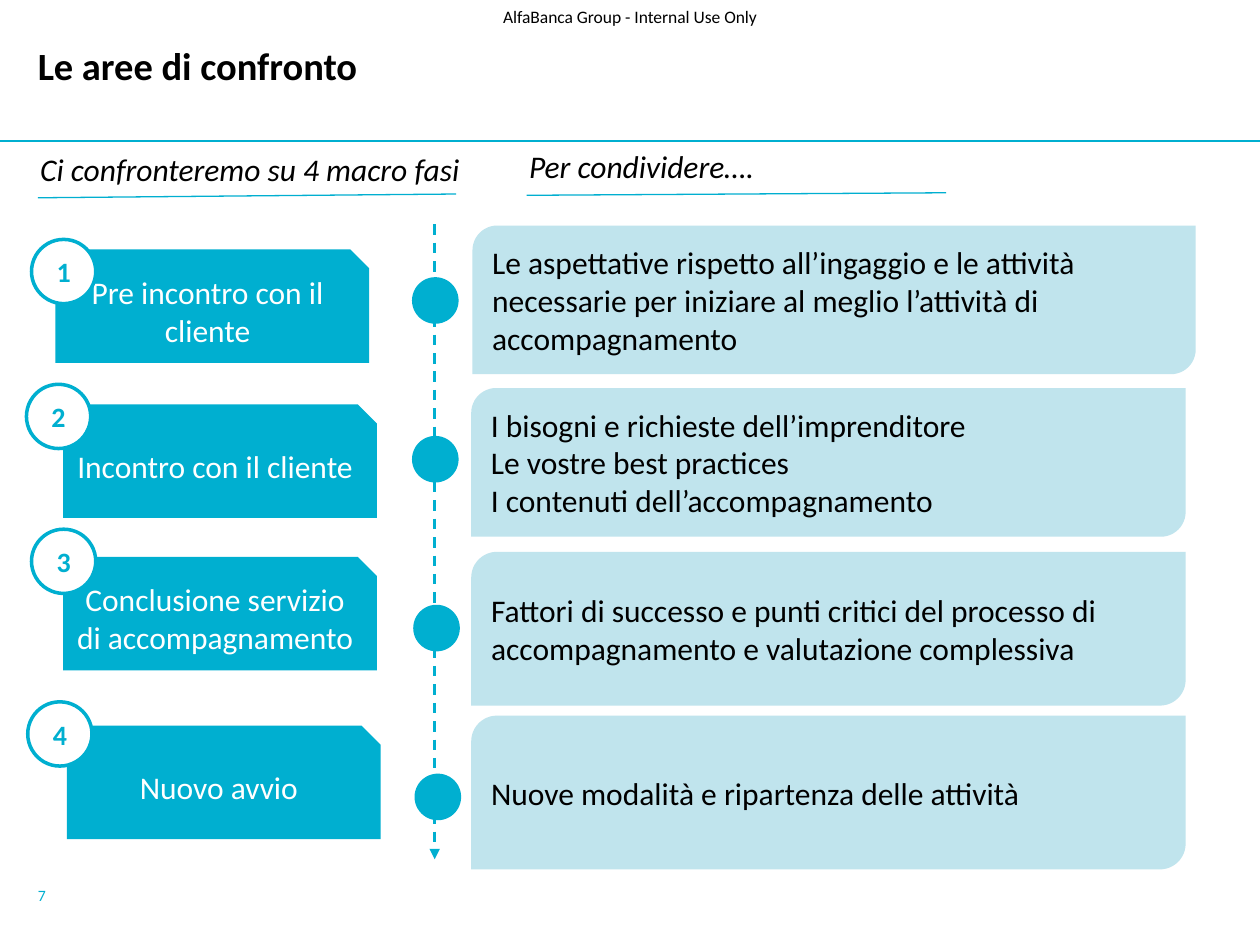
from dataclasses import dataclass

from lxml.etree import SubElement
from pptx import Presentation
from pptx.dml.color import RGBColor
from pptx.enum.dml import MSO_LINE
from pptx.enum.shapes import MSO_CONNECTOR, MSO_SHAPE
from pptx.enum.text import MSO_ANCHOR, PP_ALIGN
from pptx.oxml.ns import qn
from pptx.util import Inches, Pt


@dataclass(frozen=True)
class Theme:
    """Colours, font and type sizes of the slide."""
    font: str = "Calibri"
    accent: RGBColor = RGBColor(0x00, 0xAF, 0xD0)
    pale: RGBColor = RGBColor(0xC0, 0xE4, 0xED)
    white: RGBColor = RGBColor(0xFF, 0xFF, 0xFF)
    black: RGBColor = RGBColor(0x00, 0x00, 0x00)
    title: int = 22
    body: int = 18
    badge: int = 16
    label: int = 10
    page: int = 9


@dataclass(frozen=True)
class Phase:
    """One phase: its texts and the boxes of its parts."""
    step: str
    topics: tuple
    step_at: tuple
    badge_at: tuple
    dot_at: tuple
    topics_box: tuple


THEME = Theme()
STEP_SIZE = (2.49, 0.9)
BADGE_SIZE = (0.51, 0.51)
DOT_SIZE = (0.37, 0.37)
PHASES = [
    Phase("Pre incontro con il cliente",
          ("Le aspettative rispetto all’ingaggio e le attività necessarie per "
           "iniziare al meglio l’attività di accompagnamento",),
          (0.44, 1.98), (0.25, 1.9), (3.27, 2.2), (3.75, 1.79, 5.74, 1.18)),
    Phase("Incontro con il cliente",
          ("I bisogni e richieste dell’imprenditore", "Le vostre best practices",
           "I contenuti dell’accompagnamento"),
          (0.5, 3.21), (0.21, 3.05), (3.27, 3.46), (3.74, 3.08, 5.67, 1.18)),
    Phase("Conclusione servizio di accompagnamento",
          ("Fattori di successo e punti critici del processo di "
           "accompagnamento e valutazione complessiva",),
          (0.5, 4.42), (0.25, 4.2), (3.28, 4.8), (3.74, 4.38, 5.67, 1.22)),
    Phase("Nuovo avvio", ("Nuove modalità e ripartenza delle attività",),
          (0.53, 5.76), (0.22, 5.57), (3.29, 6.14), (3.74, 5.68, 5.67, 1.22)),
]


def write(tf, lines, size, color, align=PP_ALIGN.LEFT, bold=False, italic=False):
    """Fill a text frame with one paragraph per line."""
    tf.word_wrap = True
    tf.vertical_anchor = MSO_ANCHOR.MIDDLE
    for i, line in enumerate(lines):
        p = tf.add_paragraph() if i else tf.paragraphs[0]
        p.alignment = align
        r = p.add_run()
        r.text = line
        r.font.name, r.font.size = THEME.font, Pt(size)
        r.font.bold, r.font.italic = bold, italic
        r.font.color.rgb = color


def add_label(s, box, text, size, color, inset=True, **style):
    """Add a text box and return its text frame."""
    tf = s.shapes.add_textbox(*map(Inches, box)).text_frame
    if not inset:
        tf.margin_left = tf.margin_top = tf.margin_right = tf.margin_bottom = 0
    write(tf, [text], size, color, **style)
    return tf


def add_block(s, kind, box, fill, outline=None):
    """Add a flat preset shape."""
    sp = s.shapes.add_shape(kind, *map(Inches, box))
    sp.shadow.inherit = False
    sp.fill.solid()
    sp.fill.fore_color.rgb = fill
    if outline is None:
        sp.line.fill.background()
    else:
        sp.line.color.rgb, sp.line.width = outline, Pt(2)
    return sp


def add_rule(s, start, end, width):
    """Add a flat straight line in the accent colour."""
    c = s.shapes.add_connector(MSO_CONNECTOR.STRAIGHT, *map(Inches, start + end))
    c.line.color.rgb, c.line.width = THEME.accent, Pt(width)
    SubElement(c._element.spPr, qn("a:effectLst"))
    return c


def add_frame(s):
    """Add the classification label, title, header rule and page number."""
    add_rule(s, (0, 1.12), (10, 1.12), 1.5)
    add_label(s, (3.88, 0, 2.24, 0.27), "AlfaBanca Group - Internal Use Only",
              THEME.label, THEME.black, inset=False, align=PP_ALIGN.CENTER)
    tf = add_label(s, (0.3, 0, 9.5, 1.1), "Le aree di confronto",
                   THEME.title, THEME.black, inset=False, bold=True)
    tf.paragraphs[0].line_spacing = Pt(THEME.title)
    add_label(s, (0.3, 6.91, 0.3, 0.39), "7", THEME.page, THEME.accent, inset=False)


def add_heading(s, box, text, start, end):
    """Add an italic column heading with its underline."""
    add_label(s, box, text, THEME.body, THEME.black, italic=True)
    add_rule(s, start, end, 0.75)


def add_timeline(s, x, top, bottom):
    """Add the dashed arrow running down through the phases."""
    c = add_rule(s, (x, top), (x, bottom), 1.5)
    c.line.dash_style = MSO_LINE.DASH
    SubElement(c.line._get_or_add_ln(), qn("a:tailEnd"), type="triangle")


def add_phase(s, number, phase):
    """Add a phase row: step, numbered badge, timeline dot and topics."""
    sp = add_block(s, MSO_SHAPE.ROUND_2_DIAG_RECTANGLE, phase.topics_box, THEME.pale)
    write(sp.text_frame, phase.topics, THEME.body, THEME.black)
    add_block(s, MSO_SHAPE.OVAL, phase.dot_at + DOT_SIZE, THEME.accent)
    sp = add_block(s, MSO_SHAPE.SNIP_1_RECTANGLE, phase.step_at + STEP_SIZE, THEME.accent)
    write(sp.text_frame, [phase.step], THEME.body, THEME.white, PP_ALIGN.CENTER)
    sp = add_block(s, MSO_SHAPE.OVAL, phase.badge_at + BADGE_SIZE, THEME.white, THEME.accent)
    write(sp.text_frame, [str(number)], THEME.badge, THEME.accent, PP_ALIGN.CENTER, bold=True)


def main():
    """Build the slide and save it."""
    prs = Presentation()
    prs.slide_width, prs.slide_height = Inches(10), Inches(7.5)
    s = prs.slides.add_slide(prs.slide_layouts[6])
    add_frame(s)
    add_timeline(s, 3.45, 1.78, 6.82)
    for number, phase in enumerate(PHASES, 1):
        add_phase(s, number, phase)
    add_heading(s, (0.22, 1.14, 4.55, 0.4), "Ci confronteremo su 4 macro fasi",
                (0.3, 1.57), (3.62, 1.54))
    add_heading(s, (4.1, 1.12, 4.55, 0.4), "Per condividere….",
                (4.18, 1.55), (7.51, 1.53))
    prs.save("out.pptx")


if __name__ == "__main__":
    main()
